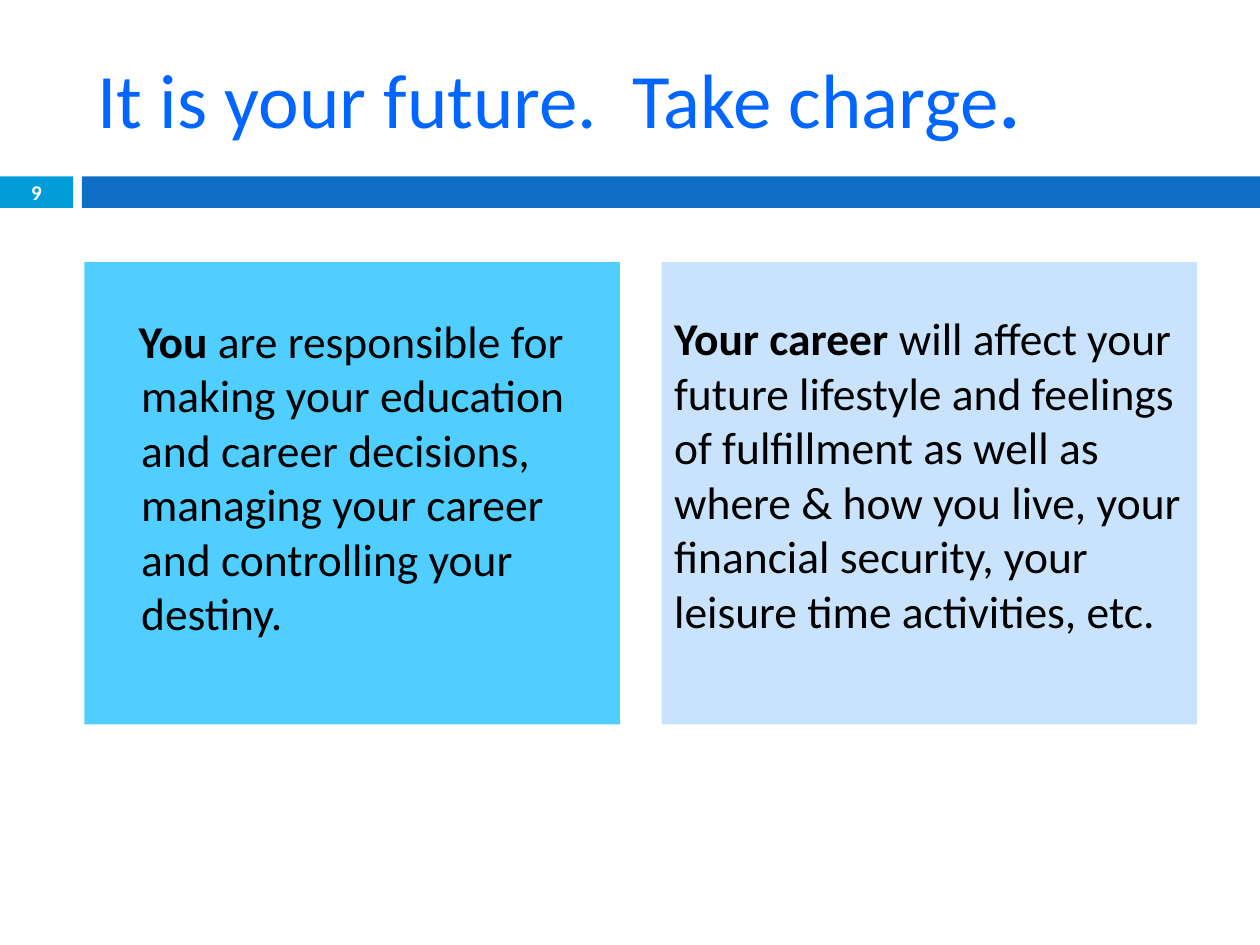
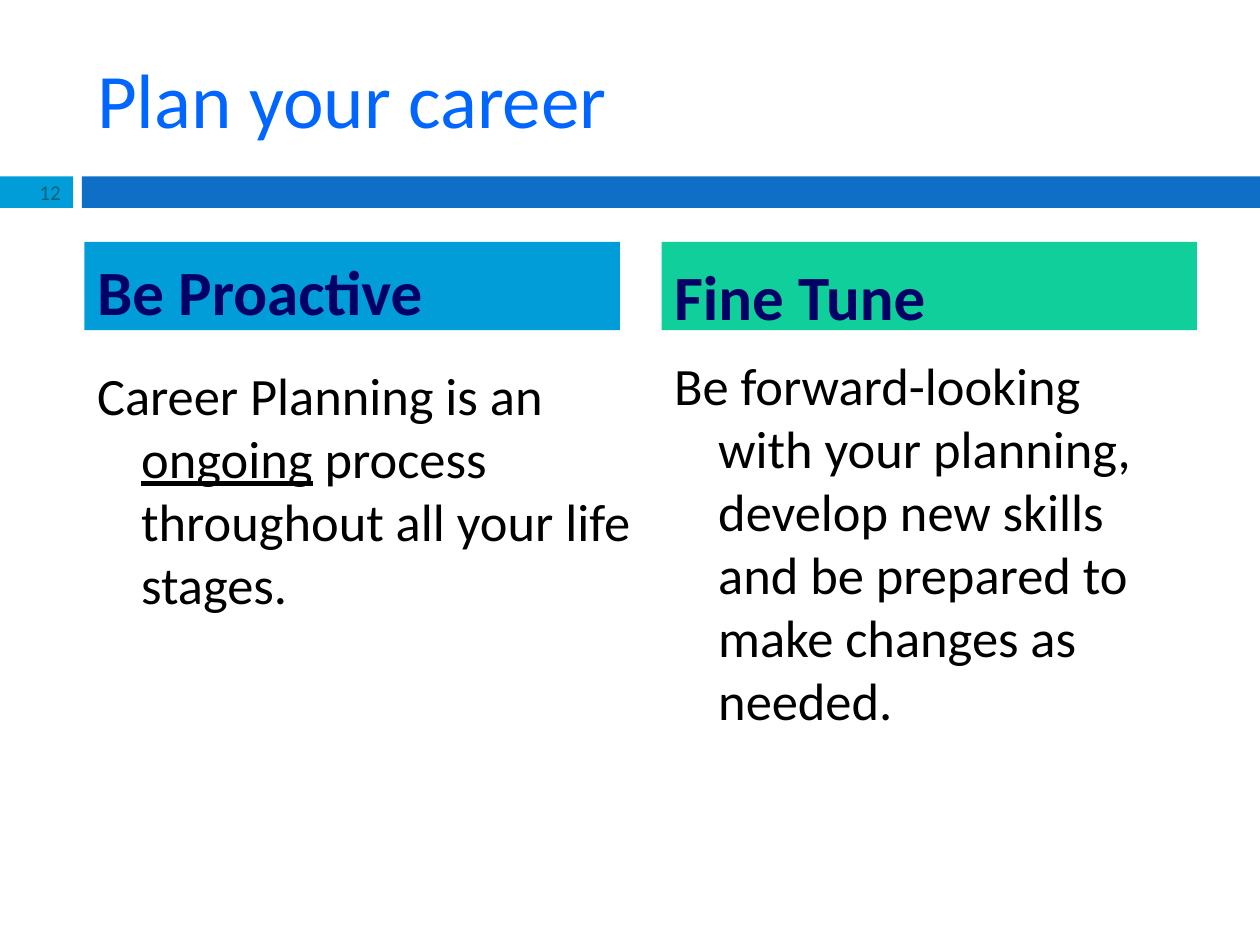
from dataclasses import dataclass
from typing import Optional

from lxml.etree import SubElement
from pptx import Presentation
from pptx.dml.color import RGBColor
from pptx.enum.shapes import MSO_SHAPE
from pptx.enum.text import MSO_ANCHOR, MSO_AUTO_SIZE, PP_ALIGN
from pptx.oxml.ns import qn
from pptx.util import Inches, Pt

# Shared look
FONT = "Calibri"
BLACK = RGBColor(0x00, 0x00, 0x00)
WHITE = RGBColor(0xFF, 0xFF, 0xFF)
NAVY = RGBColor(0x00, 0x00, 0x66)
TITLE = RGBColor(0x00, 0x66, 0xFF)
BLUE = RGBColor(0x0F, 0x6F, 0xC6)
CYAN = RGBColor(0x00, 0x9D, 0xD9)
SKY = RGBColor(0x4F, 0xCE, 0xFF)
PALE = RGBColor(0xC8, 0xE3, 0xFB)
GREEN = RGBColor(0x10, 0xCF, 0x9B)
TEAL = RGBColor(0x04, 0x61, 0x7B)

# Column grid
LEFT, RIGHT, WIDE = 0.67, 5.25, 4.25


@dataclass
class Span:
    text: str
    bold: bool = False
    line: bool = False


@dataclass
class Panel:
    slot: int
    box: tuple[float, float, float, float]
    spans: list[Span]
    size: float
    color: RGBColor = BLACK
    fill: Optional[RGBColor] = None
    anchor: MSO_ANCHOR = MSO_ANCHOR.TOP
    top: float = 0.05
    base: float = 0.05
    margin: float = 0
    indent: float = 0


@dataclass
class Page:
    layout: int
    title: list[Span]
    number: str
    align: PP_ALIGN
    ink: RGBColor
    bold: bool
    panels: list[Panel]


def place(shape, box: tuple[float, float, float, float]) -> None:
    shape.left, shape.top, shape.width, shape.height = map(Inches, box)


def write(shape, spans: list[Span], size: float, color: RGBColor,
          align: PP_ALIGN = PP_ALIGN.LEFT,
          anchor: MSO_ANCHOR = MSO_ANCHOR.MIDDLE):
    """Fill a shape with one paragraph of styled spans."""
    frame = shape.text_frame
    frame.word_wrap = True
    frame.auto_size = MSO_AUTO_SIZE.NONE
    frame.vertical_anchor = anchor
    para = frame.paragraphs[0]
    para.alignment = align
    para.space_before = Pt(0)
    for span in spans:
        run = para.add_run()
        run.text = span.text
        font = run.font
        font.name, font.size = FONT, Pt(size)
        font.bold, font.underline = span.bold, span.line
        font.color.rgb = color
    return para


def add_band(slide, left: float, width: float, color: RGBColor) -> None:
    band = slide.shapes.add_shape(MSO_SHAPE.RECTANGLE, Inches(left),
                                  Inches(1.4), Inches(width), Inches(0.25))
    band.shadow.inherit = False
    band.fill.solid()
    band.fill.fore_color.rgb = color
    band.line.fill.background()


def fill_panel(slide, panel: Panel) -> None:
    shape = slide.placeholders[panel.slot]
    place(shape, panel.box)
    if panel.fill is not None:
        shape.fill.solid()
        shape.fill.fore_color.rgb = panel.fill
    para = write(shape, panel.spans, panel.size, panel.color,
                 anchor=panel.anchor)
    shape.text_frame.margin_top = Inches(panel.top)
    shape.text_frame.margin_bottom = Inches(panel.base)
    # Indents, with the bullet switched off
    props = para._p.get_or_add_pPr()
    props.set("marL", str(Inches(panel.margin)))
    props.set("indent", str(Inches(panel.indent)))
    SubElement(props, qn("a:buNone"))


def add_page(deck, page: Page) -> None:
    slide = deck.slides.add_slide(deck.slide_layouts[page.layout])
    # Title and band
    title = slide.shapes.title
    place(title, (LEFT, 0.3, 8.83, 0.95))
    write(title, page.title, 44, TITLE)
    add_band(slide, 0, 0.58, CYAN)
    add_band(slide, 0.65, 9.35, BLUE)
    # Body
    for panel in page.panels:
        fill_panel(slide, panel)
    # Page number
    label = slide.shapes.add_textbox(0, Inches(1.39), Inches(0.58),
                                     Inches(0.27))
    write(label, [Span(page.number, page.bold)], 12, page.ink, page.align)


FUTURE = Page(
    3, [Span("It is your future.  Take charge"), Span(".", bold=True)],
    "9", PP_ALIGN.CENTER, WHITE, True,
    [
        Panel(1, (LEFT, 2.08, WIDE, 3.67),
              [Span("You", bold=True),
               Span(" are responsible for making your education and career "
                    "decisions, managing your career and controlling your "
                    "destiny.")],
              26, fill=SKY, anchor=MSO_ANCHOR.MIDDLE, base=0.32,
              margin=0.35, indent=-0.02),
        Panel(2, (RIGHT, 2.08, WIDE, 3.67),
              [Span("Your career ", bold=True),
               Span("will affect your future lifestyle and feelings of "
                    "fulfillment as well as where & how you live, your "
                    "financial security, your leisure time activities, "
                    "etc.")],
              26, fill=PALE, anchor=MSO_ANCHOR.MIDDLE, base=0.36),
    ])

PLAN = Page(
    4, [Span("Plan your career")], "12", PP_ALIGN.RIGHT, TEAL, False,
    [
        Panel(1, (LEFT, 1.92, WIDE, 0.7), [Span("Be Proactive", bold=True)],
              36, NAVY, CYAN, top=0.08, base=0),
        Panel(2, (LEFT, 2.83, 4.5, 3.92),
              [Span("Career Planning is an "), Span("ongoing", line=True),
               Span(" process throughout all your life stages.")],
              30, margin=0.35, indent=-0.35),
        Panel(3, (RIGHT, 1.92, WIDE, 0.7), [Span("Fine Tune", bold=True)],
              36, NAVY, GREEN, top=0.12, base=0),
        Panel(4, (RIGHT, 2.75, WIDE, 3.92),
              [Span("Be forward-looking with your planning, develop new "
                    "skills and be prepared to make changes as needed.")],
              30, margin=0.35, indent=-0.35),
    ])


def main() -> None:
    deck = Presentation()
    deck.slide_width, deck.slide_height = Inches(10), Inches(7.5)
    for page in (FUTURE, PLAN):
        add_page(deck, page)
    deck.save("out.pptx")


if __name__ == "__main__":
    main()
